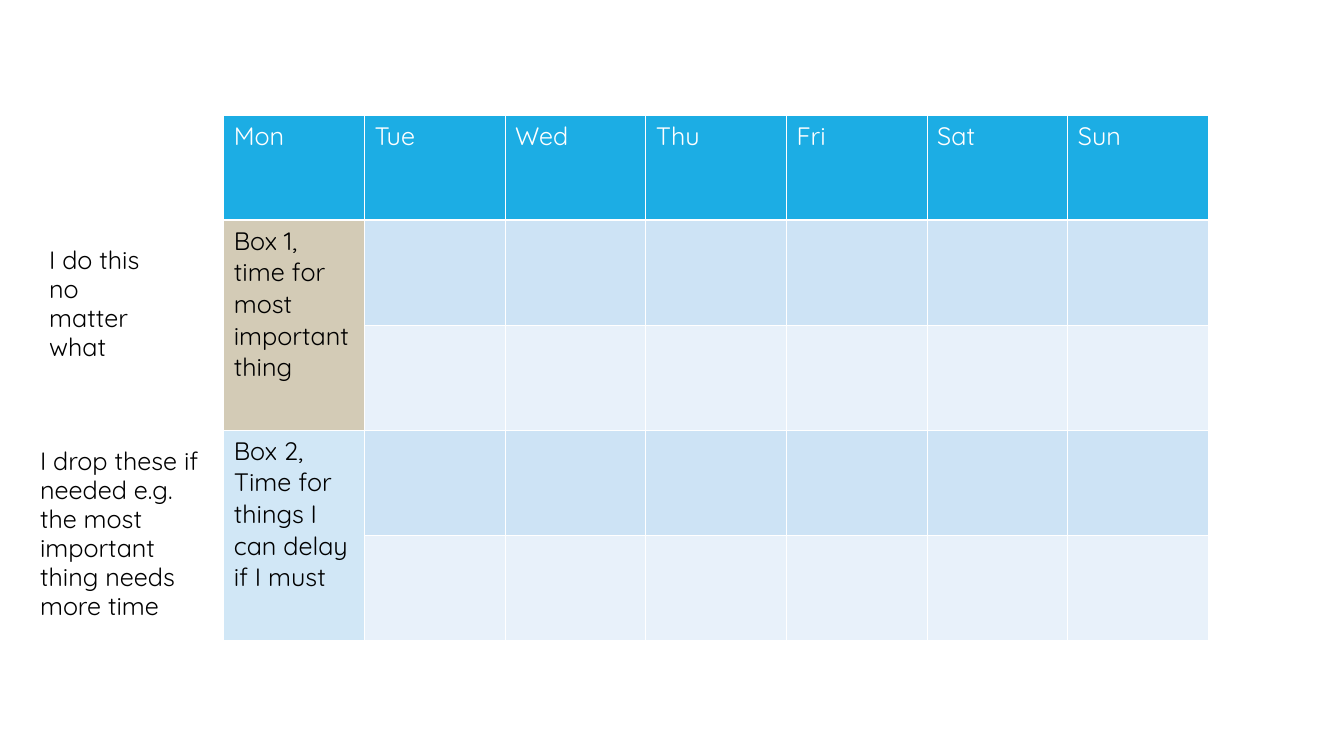
from typing import NamedTuple

from lxml.etree import SubElement
from pptx import Presentation
from pptx.dml.color import RGBColor
from pptx.oxml.ns import qn
from pptx.util import Cm, Pt

COLORS = {
    "white": "FFFFFF",
    "black": "000000",
    "header": "1CADE4",
    "dark_band": "CDE3F5",
    "light_band": "E8F1FA",
    "important": "D3CBB6",
    "delayable": "D1E7F6",
}
FONT = "Quicksand"
DAYS = ["Mon", "Tue", "Wed", "Thu", "Fri", "Sat", "Sun"]
ROW_COUNT = 5
TABLE_WIDTH, TABLE_HEIGHT = 24.82, 13.23


class TimeBlock(NamedTuple):
    first_row: int
    color: str
    lines: list[str]


class SideNote(NamedTuple):
    left: float
    top: float
    width: float
    height: float
    lines: list[str]


BLOCKS = [
    TimeBlock(1, "important", ["Box 1,", "time for most important thing"]),
    TimeBlock(3, "delayable", ["Box 2,", "Time for things I can delay if I must"]),
]
NOTES = [
    SideNote(0.99, 6.07, 3.56, 1.8, ["I do this no", "matter what"]),
    SideNote(0.76, 11.15, 4.7, 4.88,
             ["I drop these if needed e.g. the most important thing needs more time"]),
]


def rgb(name: str) -> RGBColor:
    """Return the named colour."""
    return RGBColor.from_string(COLORS[name])


def write(frame, lines: list[str], *, color: str = "black", spacing: float = 1.0) -> None:
    """Fill a text frame with one paragraph per line."""
    frame.word_wrap = True
    for index, line in enumerate(lines):
        para = frame.add_paragraph() if index else frame.paragraphs[0]
        para.line_spacing = spacing
        span = para.add_run()
        span.text = line
        span.font.name = FONT
        span.font.size = Pt(18)
        span.font.bold = False
        span.font.color.rgb = rgb(color)


def style_cell(cell, color: str) -> None:
    """Give a cell thin white borders and a solid fill."""
    properties = cell._tc.get_or_add_tcPr()
    for side in ("lnL", "lnR", "lnT", "lnB"):
        line = SubElement(properties, qn(f"a:{side}"), w=str(Pt(1)))
        fill = SubElement(line, qn("a:solidFill"))
        SubElement(fill, qn("a:srgbClr"), val=COLORS["white"])
    cell.fill.solid()
    cell.fill.fore_color.rgb = rgb(color)


def add_week(page) -> None:
    """Draw the weekly planner table."""
    table = page.shapes.add_table(ROW_COUNT, len(DAYS), Cm(5.64), Cm(2.9),
                                  Cm(TABLE_WIDTH), Cm(TABLE_HEIGHT)).table
    table.horz_banding = False
    for column in table.columns:
        column.width = Cm(TABLE_WIDTH / len(DAYS))
    for row in table.rows:
        row.height = Cm(TABLE_HEIGHT / ROW_COUNT)
    for column, day in enumerate(DAYS):
        style_cell(table.cell(0, column), "header")
        write(table.cell(0, column).text_frame, [day], color="white")
    for row in range(1, ROW_COUNT):
        for column in range(1, len(DAYS)):
            style_cell(table.cell(row, column), "dark_band" if row % 2 else "light_band")
    for block in BLOCKS:
        first, last = (table.cell(block.first_row + step, 0) for step in (0, 1))
        style_cell(first, block.color)
        style_cell(last, block.color)
        first.merge(last)
        write(first.text_frame, block.lines)


def add_note(page, note: SideNote) -> None:
    """Draw one note beside the table."""
    box = page.shapes.add_textbox(Cm(note.left), Cm(note.top), Cm(note.width), Cm(note.height))
    write(box.text_frame, note.lines, spacing=0.96)


def main() -> None:
    """Build and save the deck."""
    deck = Presentation()
    deck.slide_width, deck.slide_height = Cm(33.87), Cm(19.05)
    page = deck.slides.add_slide(deck.slide_layouts[6])
    page.background.fill.solid()
    page.background.fill.fore_color.rgb = rgb("white")
    add_week(page)
    for note in NOTES:
        add_note(page, note)
    deck.save("out.pptx")


if __name__ == "__main__":
    main()
